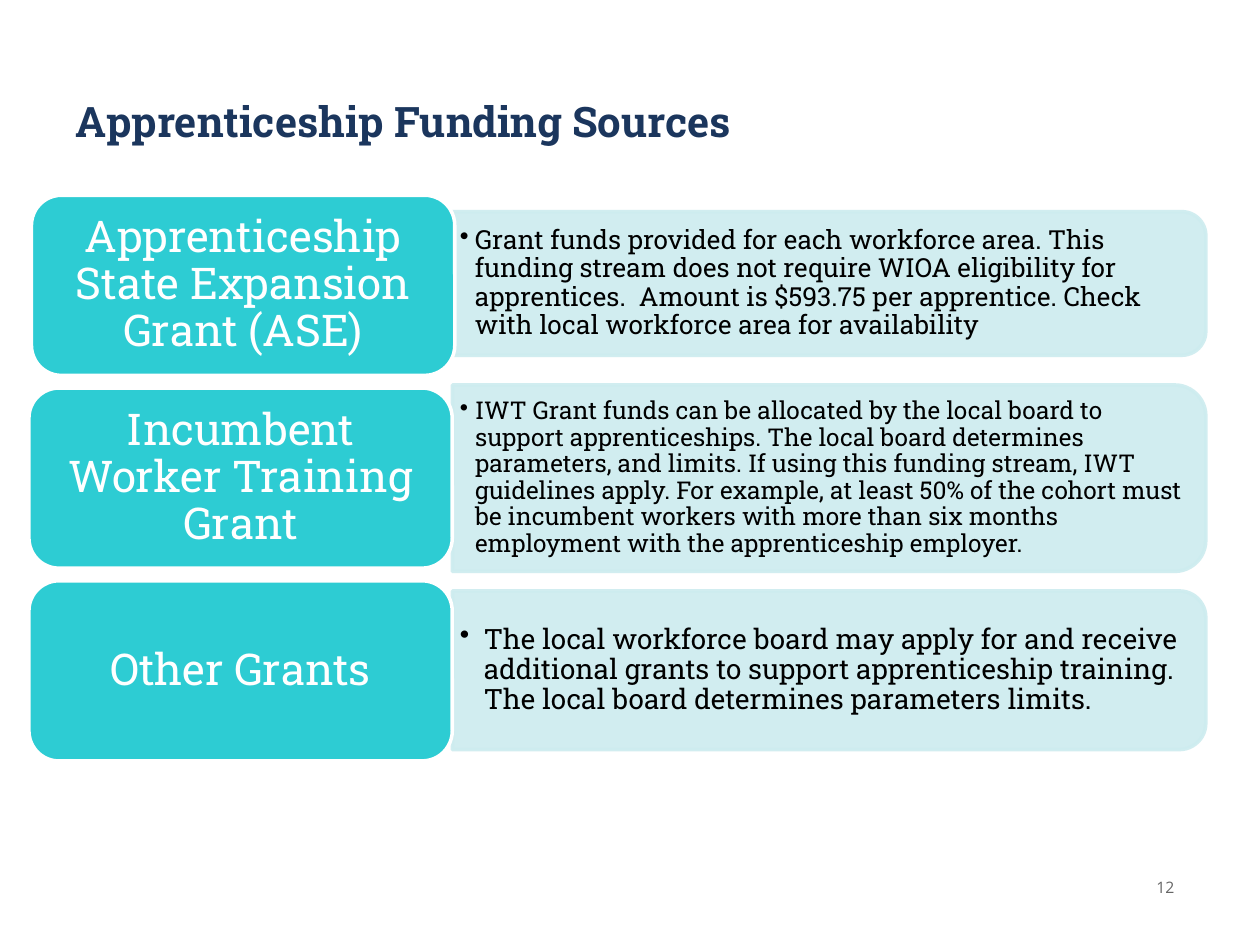
from pptx import Presentation
from pptx.dml.color import RGBColor
from pptx.enum.shapes import MSO_SHAPE
from pptx.enum.text import MSO_ANCHOR, PP_ALIGN
from pptx.oxml.ns import qn
from pptx.util import Inches, Pt
from lxml.etree import SubElement

COLORS = {
    "navy": "1B365D",
    "teal": "2DCCD3",
    "mist": "CDECEF",
    "white": "FFFFFF",
    "black": "000000",
    "gray": "666666",
}
SLAB = "Roboto Slab"
WIDTH, HEIGHT = 10, 7.5
COLUMN, ROW = WIDTH / 100, HEIGHT / 75
CARD_WIDTH, CARD_HEIGHT, CARD_PITCH = 33.6, 14.3, 15.3
CARD_TOP = 15.5
PANEL_LEFT, PANEL_WIDTH = 35.9, 59.8

FUNDING = [
    dict(
        name="Apprenticeship State Expansion Grant (ASE)",
        detail="Grant funds provided for each workforce area. This funding stream "
        "does not require WIOA eligibility for apprentices.  Amount is $593.75 per "
        "apprentice. Check with local workforce area for availability",
        size=15, indent=0.12, card_left=2.5, panel_top=16.8, panel_height=11.4,
    ),
    dict(
        name="Incumbent Worker Training Grant",
        detail="IWT Grant funds can be allocated by the local board to support "
        "apprenticeships. The local board determines parameters, and limits. If "
        "using this funding stream, IWT guidelines apply. For example, at least 50% "
        "of the cohort must be incumbent workers with more than six months "
        "employment with the apprenticeship employer.",
        size=14, indent=0.12, card_left=2.3, panel_top=30.55, panel_height=14.8,
    ),
    dict(
        name="Other Grants",
        detail="The local workforce board may apply for and receive additional "
        "grants to support apprenticeship training. The local board determines "
        "parameters limits.",
        size=16, indent=0.19, card_left=2.3, panel_top=46.9, panel_height=12.6,
    ),
]


def place(left, top, width, height):
    return (Inches(left * COLUMN), Inches(top * ROW),
            Inches(width * COLUMN), Inches(height * ROW))


def write(box, text, size, color, font=SLAB, bold=False, align=PP_ALIGN.LEFT,
          margins=(0.1, 0.05), spacing=None, indent=None):
    frame = box.text_frame
    frame.word_wrap = True
    frame.vertical_anchor = MSO_ANCHOR.MIDDLE
    frame.margin_left = frame.margin_right = Inches(margins[0])
    frame.margin_top = frame.margin_bottom = Inches(margins[1])
    para = frame.paragraphs[0]
    para.alignment = align
    if spacing:
        para.line_spacing = spacing
    if indent:
        para.level = 1
        properties = para._p.get_or_add_pPr()
        properties.set("marL", str(Inches(indent)))
        properties.set("indent", str(-Inches(indent)))
        SubElement(properties, qn("a:buChar")).set("char", "•")
    span = para.add_run()
    span.text = text
    span.font.name = font
    span.font.size = Pt(size)
    span.font.bold = bold
    span.font.color.rgb = RGBColor.from_string(COLORS[color])


def add_rounded(page, kind, area, fill, line, opacity=None):
    shape = page.shapes.add_shape(kind, *place(*area))
    shape.shadow.inherit = False
    shape.fill.solid()
    shape.fill.fore_color.rgb = RGBColor.from_string(COLORS[fill])
    shape.line.color.rgb = RGBColor.from_string(COLORS[line])
    shape.line.width = Pt(2)
    if opacity:
        for color in shape._element.spPr.iter(qn("a:srgbClr")):
            SubElement(color, qn("a:alpha")).set("val", str(opacity * 1000))
    return shape


def add_title(page, area, text):
    box = page.shapes.add_textbox(*place(*area))
    write(box, text, 24, "navy", bold=True)


def add_panel(page, area, text, size, indent):
    left, top, width, height = area
    turned = (left + (width - height) / 2, top + (height - width) / 2, height, width)
    panel = add_rounded(page, MSO_SHAPE.ROUND_2_SAME_RECTANGLE, turned,
                        "mist", "mist", opacity=90)
    panel.rotation = 90
    inset = height * 0.05
    box = page.shapes.add_textbox(
        *place(left, top + inset, width - inset, height - 2 * inset))
    write(box, text, size, "black", margins=(0.06, 0.03), spacing=0.9, indent=indent)


def add_card(page, area, text):
    card = add_rounded(page, MSO_SHAPE.ROUNDED_RECTANGLE, area, "teal", "white")
    write(card, text, 25, "white", align=PP_ALIGN.CENTER, spacing=0.9)


def add_page_number(page, area, text):
    box = page.shapes.add_textbox(*place(*area))
    write(box, text, 9, "gray", font="Open Sans", align=PP_ALIGN.CENTER)
    box.text_frame._txBody.bodyPr.set("vert", "vert")
    box.rotation = 270


def main():
    deck = Presentation()
    deck.slide_width, deck.slide_height = Inches(WIDTH), Inches(HEIGHT)
    page = deck.slides.add_slide(deck.slide_layouts[6])
    add_page_number(page, (90.4, 67.9, 4.2, 5), "12")
    add_title(page, (5, 3.3, 90, 12.5), "Apprenticeship Funding Sources")
    for index, grant in enumerate(FUNDING):
        panel = (PANEL_LEFT, grant["panel_top"], PANEL_WIDTH, grant["panel_height"])
        add_panel(page, panel, grant["detail"], grant["size"], grant["indent"])
        card = (grant["card_left"], CARD_TOP + index * CARD_PITCH,
                CARD_WIDTH, CARD_HEIGHT)
        add_card(page, card, grant["name"])
    deck.save("out.pptx")


if __name__ == "__main__":
    main()
